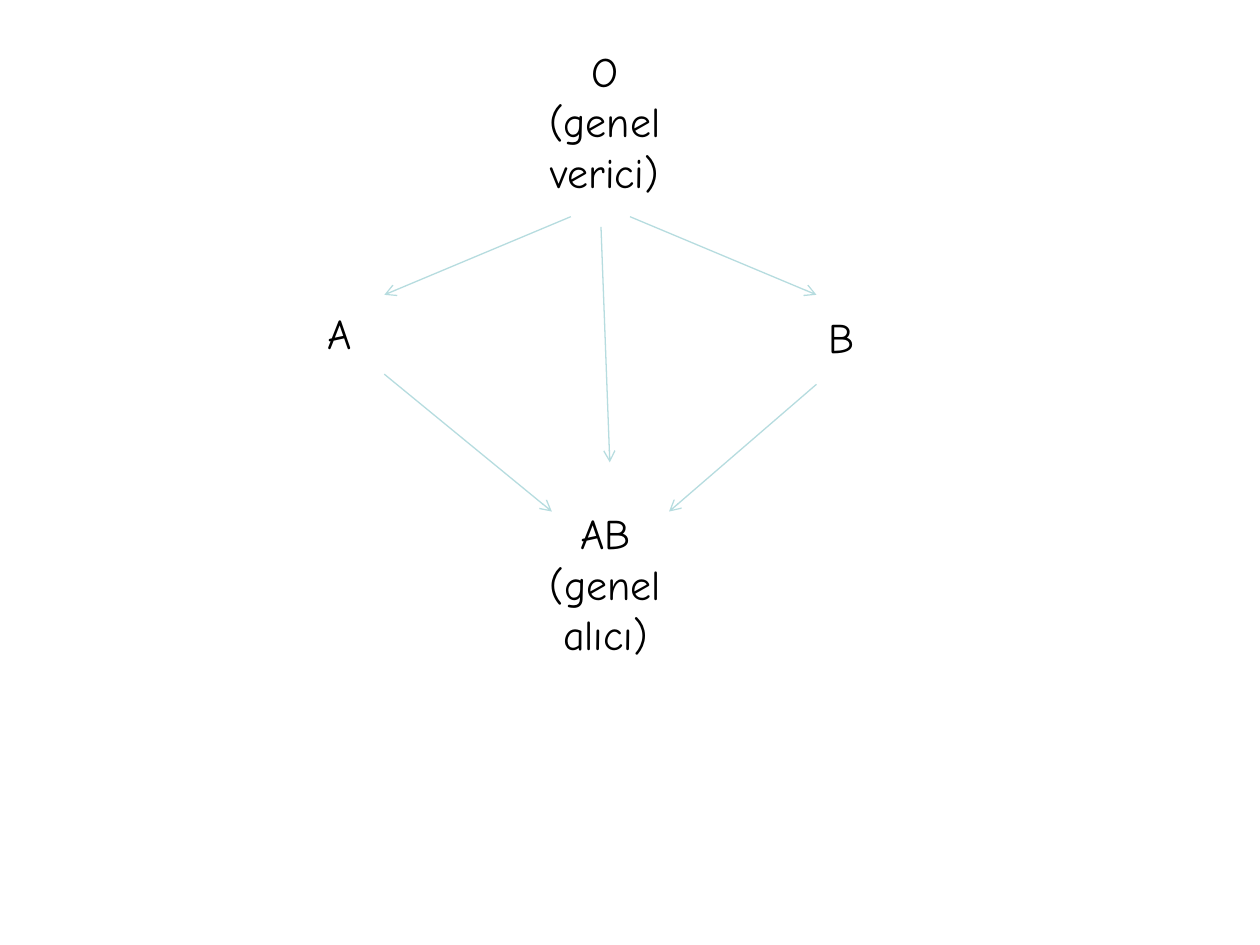
from dataclasses import dataclass

from lxml.etree import SubElement
from pptx import Presentation
from pptx.dml.color import RGBColor
from pptx.enum.shapes import MSO_CONNECTOR
from pptx.enum.text import MSO_AUTO_SIZE, PP_ALIGN
from pptx.oxml.ns import qn
from pptx.util import Inches, Pt

COLORS = {"text": "000000", "arrow": "B6DCDF"}
FONT = "Comic Neue"
WIDTH, HEIGHT = 10, 7.5


@dataclass(frozen=True)
class BloodGroup:
    text: str
    left: float
    top: float
    width: float
    height: float
    align: PP_ALIGN = PP_ALIGN.LEFT


@dataclass(frozen=True)
class Donation:
    """An arrow from donor to recipient, in inches."""
    start: tuple[float, float]
    end: tuple[float, float]


GROUPS = [
    BloodGroup("O\n(genel verici)", 4.06, 0.31, 1.48, 1.31, PP_ALIGN.CENTER),
    BloodGroup("A", 2.5, 2.39, 0.62, 0.51),
    BloodGroup("B", 6.48, 2.42, 0.62, 0.51),
    BloodGroup("AB\n(genel alıcı)", 4.14, 3.98, 1.33, 1.31, PP_ALIGN.CENTER),
]
DONATIONS = [
    Donation((4.77, 1.8), (4.84, 3.67)),
    Donation((4.53, 1.72), (3.05, 2.34)),
    Donation((5, 1.72), (6.48, 2.34)),
    Donation((3.05, 2.97), (4.38, 4.06)),
    Donation((6.48, 3.05), (5.31, 4.06)),
]


def add_text(page, text: str, *, left: float, top: float, width: float,
             height: float, align: PP_ALIGN, size: float = 24) -> None:
    box = page.shapes.add_textbox(*map(Inches, (left, top, width, height)))
    frame = box.text_frame
    frame.word_wrap = True
    frame.auto_size = MSO_AUTO_SIZE.SHAPE_TO_FIT_TEXT
    para = frame.paragraphs[0]
    para.text = text
    para.alignment = align
    for span in para.runs:
        span.font.name = FONT
        span.font.size = Pt(size)
        span.font.color.rgb = RGBColor.from_string(COLORS["text"])


def add_arrow(page, donation: Donation) -> None:
    points = map(Inches, (*donation.start, *donation.end))
    arrow = page.shapes.add_connector(MSO_CONNECTOR.STRAIGHT, *points)
    arrow.line.color.rgb = RGBColor.from_string(COLORS["arrow"])
    arrow.line.width = Pt(0.75)
    properties = arrow.element.spPr
    SubElement(properties.find(qn("a:ln")), qn("a:tailEnd"), type="arrow")
    SubElement(properties, qn("a:effectLst"))


def main() -> None:
    deck = Presentation()
    deck.slide_width, deck.slide_height = Inches(WIDTH), Inches(HEIGHT)
    page = deck.slides.add_slide(deck.slide_layouts[6])
    for group in GROUPS:
        add_text(page, group.text, left=group.left, top=group.top,
                 width=group.width, height=group.height, align=group.align)
    for donation in DONATIONS:
        add_arrow(page, donation)
    deck.save("out.pptx")


if __name__ == "__main__":
    main()
